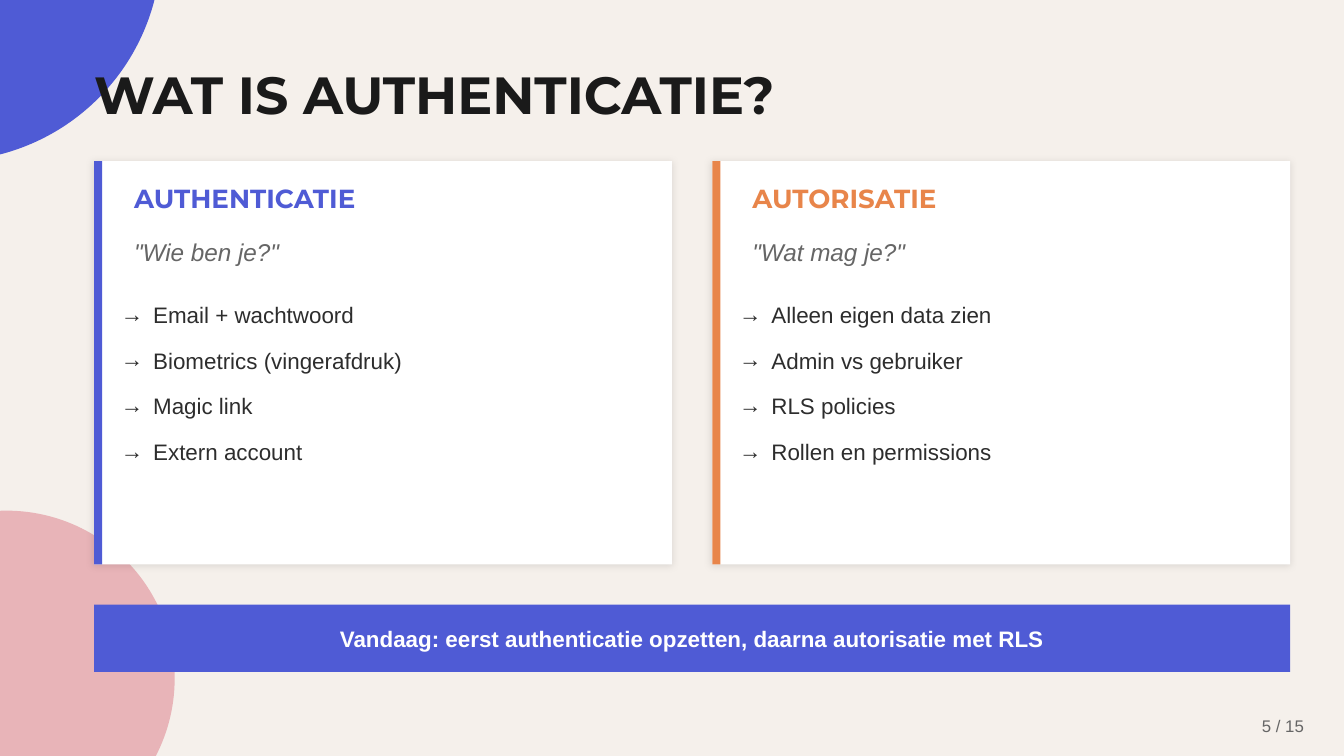
from lxml import etree
from pptx import Presentation
from pptx.dml.color import RGBColor
from pptx.enum.shapes import MSO_SHAPE
from pptx.enum.text import MSO_ANCHOR, PP_ALIGN
from pptx.oxml.ns import qn
from pptx.util import Inches, Pt

RECTANGLE, OVAL = MSO_SHAPE.RECTANGLE, MSO_SHAPE.OVAL
TOP, MIDDLE = MSO_ANCHOR.TOP, MSO_ANCHOR.MIDDLE
LEFT, CENTER, RIGHT = PP_ALIGN.LEFT, PP_ALIGN.CENTER, PP_ALIGN.RIGHT

COLORS = {
    "background": "F5F0EB", "blue": "4F5BD5", "pink": "E8B4B8",
    "orange": "E8854A", "white": "FFFFFF", "title": "1A1A1A",
    "body": "2D2D2D", "muted": "666666", "shadow": "000000",
}

deck = Presentation()
deck.slide_width = Inches(10)
deck.slide_height = deck.slide_width * 9 // 16
page = deck.slides.add_slide(deck.slide_layouts[6])
page.background.fill.solid()
page.background.fill.fore_color.rgb = RGBColor.from_string(COLORS["background"])


def add_block(kind, left, top, width, height, color):
    block = page.shapes.add_shape(
        kind, Inches(left), Inches(top), Inches(width), Inches(height))
    block.fill.solid()
    block.fill.fore_color.rgb = RGBColor.from_string(COLORS[color])
    block.line.fill.background()
    block.shadow.inherit = False
    return block


def write(box, lines, size, color, font="Arial", bold=False, italic=False,
          align=LEFT, anchor=MIDDLE, inset=True, bullet=None, spacing=None):
    frame = box.text_frame
    frame.word_wrap = True
    frame.vertical_anchor = anchor
    if not inset:
        frame.margin_left = frame.margin_right = 0
        frame.margin_top = frame.margin_bottom = 0
    for index, line in enumerate(lines):
        para = frame.paragraphs[0] if index == 0 else frame.add_paragraph()
        para.text = line
        para.alignment = align
        if spacing:
            para.line_spacing = spacing
        if bullet:
            properties = para._p.get_or_add_pPr()
            properties.set("marL", str(Inches(0.24)))
            properties.set("indent", str(-Inches(0.24)))
            etree.SubElement(properties, qn("a:buFont"), typeface="Arial")
            etree.SubElement(properties, qn("a:buChar"), char=bullet)
        para.font.name = font
        para.font.size = Pt(size)
        para.font.bold = bold
        para.font.italic = italic
        para.font.color.rgb = RGBColor.from_string(COLORS[color])


# Decorative circles
add_block(OVAL, -2, -2, 3.2, 3.2, "blue")
add_block(OVAL, -1.2, 3.8, 2.5, 2.5, "pink")

# Title and page number
title = page.shapes.add_textbox(Inches(0.7), Inches(0.4), Inches(8.5), Inches(0.6))
write(title, ["WAT IS AUTHENTICATIE?"], 28, "title", "Montserrat", bold=True, inset=False)
number = page.shapes.add_textbox(Inches(9), Inches(5.25), Inches(0.8), Inches(0.3))
write(number, ["5 / 15"], 9, "muted", align=RIGHT)

# Two cards side by side
cards = [
    ("AUTHENTICATIE", '"Wie ben je?"', "blue",
     ["Email + wachtwoord", "Biometrics (vingerafdruk)", "Magic link", "Extern account"]),
    ("AUTORISATIE", '"Wat mag je?"', "orange",
     ["Alleen eigen data zien", "Admin vs gebruiker", "RLS policies",
      "Rollen en permissions"]),
]
for column, (heading, question, accent, points) in enumerate(cards):
    left = 0.7 + column * 4.6
    card = add_block(RECTANGLE, left, 1.2, 4.3, 3, "white")
    effects = card._element.spPr.find(qn("a:effectLst"))
    shadow = etree.SubElement(
        effects, qn("a:outerShdw"), blurRad=str(Pt(4)), dist=str(Pt(1)),
        dir=str(135 * 60000), algn="bl", rotWithShape="0")
    tint = etree.SubElement(shadow, qn("a:srgbClr"), val=COLORS["shadow"])
    etree.SubElement(tint, qn("a:alpha"), val="10000")
    add_block(RECTANGLE, left, 1.2, 0.06, 3, accent)

    text_left = Inches(left + 0.2)
    box = page.shapes.add_textbox(text_left, Inches(1.3), Inches(3), Inches(0.35))
    write(box, [heading], 14, accent, "Montserrat", bold=True)
    box = page.shapes.add_textbox(text_left, Inches(1.7), Inches(3.9), Inches(0.35))
    write(box, [question], 13, "muted", italic=True)
    box = page.shapes.add_textbox(text_left, Inches(2.1), Inches(3.9), Inches(2))
    write(box, points, 12, "body", anchor=TOP, inset=False, bullet="→", spacing=1.7)

# Closing banner
banner = add_block(RECTANGLE, 0.7, 4.5, 8.9, 0.5, "blue")
write(banner, ["Vandaag: eerst authenticatie opzetten, daarna autorisatie met RLS"],
      12, "white", bold=True, align=CENTER)

deck.save("out.pptx")
